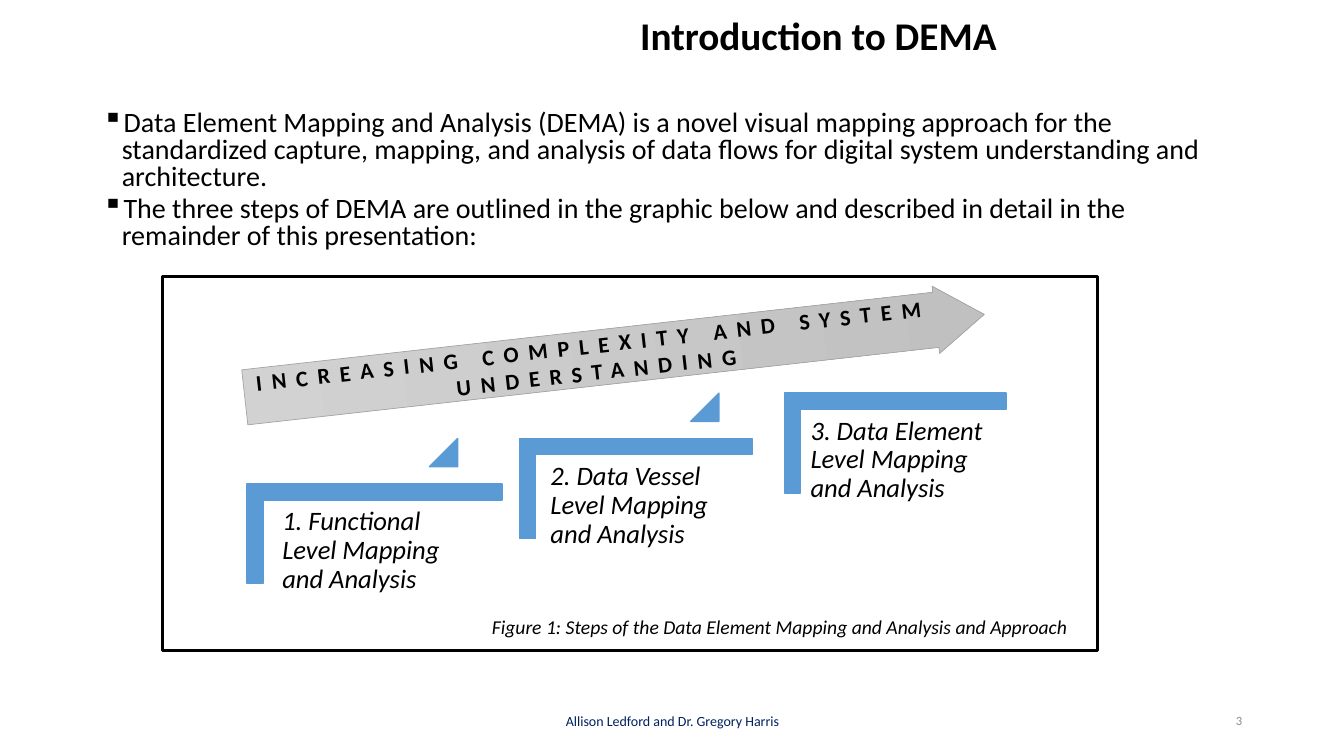
"""Build the slide that introduces the three steps of DEMA."""
from dataclasses import dataclass

from lxml import etree
from pptx import Presentation
from pptx.dml.color import RGBColor
from pptx.enum.shapes import MSO_SHAPE
from pptx.enum.text import MSO_ANCHOR, PP_ALIGN
from pptx.oxml.ns import qn
from pptx.util import Inches, Pt

TRIANGLE = MSO_SHAPE.ISOSCELES_TRIANGLE
DOWN_ARROW = MSO_SHAPE.DOWN_ARROW
RECTANGLE = MSO_SHAPE.RECTANGLE
TOP, MIDDLE = MSO_ANCHOR.TOP, MSO_ANCHOR.MIDDLE
LEFT, CENTER, RIGHT = PP_ALIGN.LEFT, PP_ALIGN.CENTER, PP_ALIGN.RIGHT

FONT_NAME = "Calibri"
BLACK, BLUE, NAVY, GRAY = "000000", "5B9BD5", "002060", "8C8C8C"
ARROW_LINE, ARROW_STOPS = "A5A5A5", ("D2D2D2", "C0C0C0")

STEP_TOP, STEP_RISE, STEP_HEIGHT, STEP_BAR = 4.8, 0.45, 0.99, 0.16
LABEL_DROP, LABEL_HEIGHT = 0.16, 1.31
TRIANGLE_SIZE = 0.28


@dataclass(frozen=True)
class Box:
    """Place of an element in inches."""
    left: float
    top: float
    width: float
    height: float

    def lengths(self):
        """Return the four lengths for python-pptx."""
        return [Inches(v) for v in (self.left, self.top, self.width, self.height)]


@dataclass(frozen=True)
class Style:
    """Look of a block of text."""
    size: float
    color: str = BLACK
    bold: bool = False
    italic: bool = False
    align: PP_ALIGN = LEFT
    anchor: MSO_ANCHOR = TOP
    line_spacing: float = 1.0
    gap: float = 0
    inset: float | None = None


@dataclass(frozen=True)
class Step:
    """One stair of the figure with its label."""
    text: str
    left: float
    width: float
    label_left: float
    label_width: float
    triangle_left: float | None = None


TITLE = Style(28, bold=True, anchor=MIDDLE, line_spacing=0.9)
BODY = Style(20, line_spacing=0.8, gap=3.8)
AUTHORS = Style(10, NAVY, align=CENTER, anchor=MIDDLE)
NUMBER = Style(9, GRAY, align=RIGHT, anchor=MIDDLE)
LABEL = Style(19, italic=True, line_spacing=0.9, inset=0.08)
BANNER = Style(16, bold=True, align=CENTER, anchor=MIDDLE)
CAPTION = Style(14, italic=True)

POINTS = [
    "Data Element Mapping and Analysis (DEMA) is a novel visual mapping approach for the "
    "standardized capture, mapping, and analysis of data flows for digital system "
    "understanding and architecture.",
    "The three steps of DEMA are outlined in the graphic below and described in detail in "
    "the remainder of this presentation:",
]
STEPS = [
    Step("1. Functional Level Mapping and Analysis", 2.45, 2.53, 2.72, 1.8, 4.26),
    Step("2. Data Vessel Level Mapping and Analysis", 5.15, 2.31, 5.38, 2.08, 6.85),
    Step("3. Data Element Level Mapping and Analysis", 7.78, 2.2, 7.96, 1.96),
]


def rgb(color: str) -> RGBColor:
    """Turn a hex string into a colour."""
    return RGBColor.from_string(color)


def set_all(target, values: dict) -> None:
    """Set each named attribute of the target."""
    for name, value in values.items():
        setattr(target, name, value)


def add_bullet(paragraph) -> None:
    """Give the paragraph a hanging square bullet."""
    properties = paragraph._p.get_or_add_pPr()
    properties.set("marL", str(Inches(0.56)))
    properties.set("indent", str(Inches(-0.19)))
    etree.SubElement(properties, qn("a:buChar")).set("char", "▪")


def write(shape, texts: list[str], style: Style, bulleted: bool = False) -> None:
    """Fill a shape with paragraphs in one style."""
    frame = shape.text_frame
    set_all(frame, {"word_wrap": True, "vertical_anchor": style.anchor})
    if style.inset is not None:
        sides = ("margin_left", "margin_top", "margin_right", "margin_bottom")
        set_all(frame, dict.fromkeys(sides, Inches(style.inset)))
    for index, text in enumerate(texts):
        paragraph = frame.add_paragraph() if index else frame.paragraphs[0]
        if bulleted:
            add_bullet(paragraph)
        set_all(paragraph, {"alignment": style.align, "line_spacing": style.line_spacing})
        if index:
            paragraph.space_before = Pt(style.gap)
        run = paragraph.add_run()
        run.text = text
        set_all(run.font, {"name": FONT_NAME, "size": Pt(style.size),
                           "bold": style.bold, "italic": style.italic})
        run.font.color.rgb = rgb(style.color)


def add_text(slide, box: Box, texts: list[str], style: Style, bulleted: bool = False) -> None:
    """Add a text box."""
    write(slide.shapes.add_textbox(*box.lengths()), texts, style, bulleted)


def paint(shape, fill: str | None, line: str, weight: float) -> None:
    """Set fill and outline and remove the shadow."""
    shape.shadow.inherit = False
    if fill:
        shape.fill.solid()
        shape.fill.fore_color.rgb = rgb(fill)
    else:
        shape.fill.background()
    shape.line.color.rgb = rgb(line)
    shape.line.width = Pt(weight)


def add_stair(slide, left: float, top: float, width: float) -> None:
    """Draw an angle with a bar on top and a bar on the left."""
    right, bottom = left + width, top + STEP_HEIGHT
    inner_left, inner_top = left + STEP_BAR, top + STEP_BAR
    corners = [(right, top), (right, inner_top), (inner_left, inner_top),
               (inner_left, bottom), (left, bottom)]
    outline = slide.shapes.build_freeform(Inches(left), Inches(top))
    outline.add_line_segments([(Inches(x), Inches(y)) for x, y in corners])
    paint(outline.convert_to_shape(), BLUE, BLUE, 1)


def add_step(slide, step: Step, top: float) -> None:
    """Draw a stair, its label and the triangle that leads upwards."""
    add_stair(slide, step.left, top, step.width)
    label = Box(step.label_left, top + LABEL_DROP, step.label_width, LABEL_HEIGHT)
    add_text(slide, label, [step.text], LABEL)
    if step.triangle_left is not None:
        box = Box(step.triangle_left, top - STEP_RISE, TRIANGLE_SIZE, TRIANGLE_SIZE)
        triangle = slide.shapes.add_shape(TRIANGLE, *box.lengths())
        triangle.adjustments[0] = 1
        paint(triangle, BLUE, BLUE, 1)


def add_banner(slide) -> None:
    """Draw the rising arrow with its letterspaced text."""
    arrow = slide.shapes.add_shape(DOWN_ARROW, *Box(5.76, -0.16, 0.67, 7.38).lengths())
    arrow.rotation = 263.6
    arrow.adjustments[0], arrow.adjustments[1] = 0.82, 0.72
    paint(arrow, None, ARROW_LINE, 0.5)
    arrow.fill.gradient()
    arrow.fill.gradient_angle = 270
    for stop, color in zip(arrow.fill.gradient_stops, ARROW_STOPS):
        stop.color.rgb = rgb(color)
    write(arrow, ["INCREASING COMPLEXITY AND SYSTEM UNDERSTANDING"], BANNER)
    arrow.text_frame._txBody.bodyPr.set("vert", "vert")
    letters = arrow.text_frame.paragraphs[0].runs[0]
    letters.font._element.set("spc", "700")


def main() -> None:
    """Build and save the slide."""
    deck = Presentation()
    set_all(deck, {"slide_width": Inches(13.33), "slide_height": Inches(7.5)})
    slide = deck.slides.add_slide(deck.slide_layouts[5])
    title = slide.shapes.title
    places = Box(6.25, 0, 7.08, 0.75).lengths()
    set_all(title, dict(zip(("left", "top", "width", "height"), places)))
    write(title, ["Introduction to DEMA"], TITLE)
    add_text(slide, Box(0.55, 1.05, 11.82, 1.55), POINTS, BODY, bulleted=True)
    add_text(slide, Box(4.42, 6.95, 4.5, 0.4), ["Allison Ledford and Dr. Gregory Harris"], AUTHORS)
    add_text(slide, Box(9.42, 6.95, 3, 0.4), ["3"], NUMBER)
    for index, step in enumerate(STEPS):
        add_step(slide, step, STEP_TOP - index * STEP_RISE)
    add_banner(slide)
    frame = slide.shapes.add_shape(RECTANGLE, *Box(1.61, 2.74, 9.28, 3.71).lengths())
    paint(frame, None, BLACK, 2.25)
    add_text(slide, Box(4.78, 6.05, 6.16, 0.34),
             ["Figure 1: Steps of the Data Element Mapping and Analysis and Approach"], CAPTION)
    deck.save("out.pptx")


if __name__ == "__main__":
    main()
